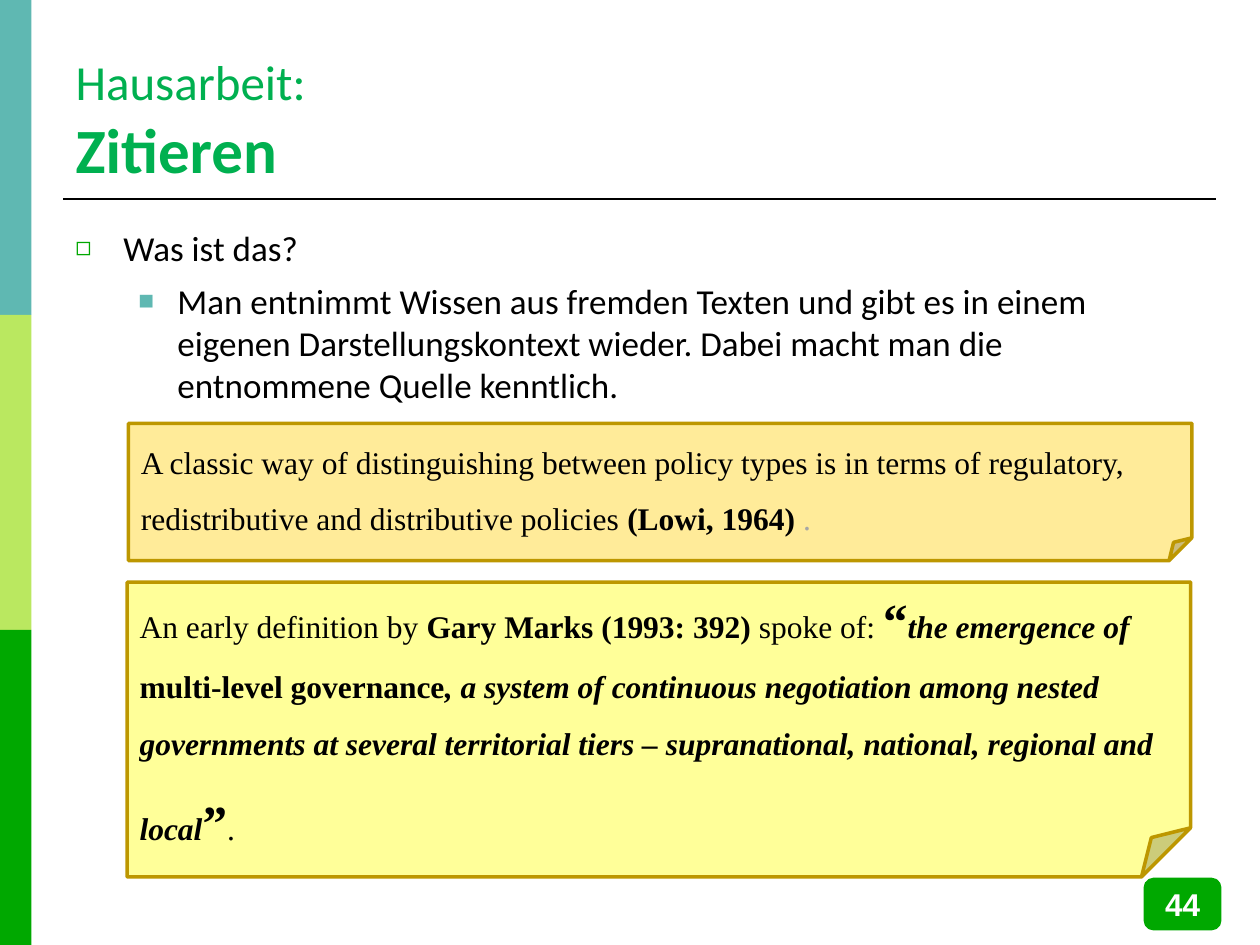
"""Build the slide about citing sources in a term paper."""
import pptx
import pptx.dml.color
import pptx.enum.shapes
import pptx.enum.text
import pptx.oxml.ns
import pptx.util
from lxml import etree

Inches = pptx.util.Inches
Pt = pptx.util.Pt
SHAPES = pptx.enum.shapes.MSO_SHAPE
ALIGN = pptx.enum.text.PP_ALIGN
ANCHOR = pptx.enum.text.MSO_ANCHOR
GREEN, TEAL, LIME = "00A800", "5FB8B2", "BAE860"
TITLE_GREEN, GOLD, BLACK = "00B050", "BD9700", "000000"
SERIF = "Times New Roman"


def color(value):
    """Turn a hex string into a colour."""
    return pptx.dml.color.RGBColor.from_string(value)


def add_child(parent, tag, **attributes):
    """Append a drawing element to a parent element."""
    return etree.SubElement(parent, pptx.oxml.ns.qn(tag), **attributes)


def add_span(para, text, size, font, ink=BLACK, bold=False, italic=False):
    """Add one formatted run to a paragraph."""
    span = para.add_run()
    span.text = text
    span.font.size = Pt(size)
    span.font.name = font
    span.font.color.rgb = color(ink)
    span.font.bold = bold
    span.font.italic = italic


def add_panel(page, kind, place, fill, line=None):
    """Add a filled preset shape with an optional outline."""
    panel = page.shapes.add_shape(kind, *map(Inches, place))
    panel.shadow.inherit = False
    panel.fill.solid()
    panel.fill.fore_color.rgb = color(fill)
    if line:
        panel.line.color.rgb = color(line)
        panel.line.width = Pt(2)
    else:
        panel.line.fill.background()
    return panel


def add_rule(page, left, right, top):
    """Add the horizontal line below the title."""
    rule = page.shapes.add_connector(
        pptx.enum.shapes.MSO_CONNECTOR.STRAIGHT,
        Inches(left), Inches(top), Inches(right), Inches(top))
    rule.line.color.rgb = color(BLACK)
    rule.line.width = Pt(1.5)
    add_child(rule._element.spPr, "a:effectLst")


def set_title(page, topic, heading):
    """Move the title and write its two lines."""
    title = page.shapes.title
    title.left, title.top = Inches(0.5), Inches(0.28)
    title.width, title.height = Inches(9.15), Inches(1.25)
    frame = title.text_frame
    frame.auto_size = pptx.enum.text.MSO_AUTO_SIZE.NONE
    frame.vertical_anchor = ANCHOR.BOTTOM
    para = frame.paragraphs[0]
    para.alignment = ALIGN.LEFT
    add_span(para, topic, 28, "Calibri", TITLE_GREEN)
    para.add_line_break()
    add_child(para._p[-1], "a:rPr", sz="2800")
    add_span(para, heading, 36, "Calibri", TITLE_GREEN, bold=True)


def add_bullet(para, text, level, symbol, ink, margin, hanging):
    """Write a bulleted paragraph with a hanging indent."""
    para.level = level
    properties = para._p.get_or_add_pPr()
    properties.set("marL", str(Inches(margin)))
    properties.set("indent", str(-Inches(hanging)))
    add_child(add_child(properties, "a:buClr"), "a:srgbClr", val=ink)
    add_child(properties, "a:buSzPct", val="75000")
    add_child(properties, "a:buFont", typeface="Arial")
    add_child(properties, "a:buChar", char=symbol)
    para.space_after = Pt(6)
    add_span(para, text, 20, "Calibri")


def add_body(page):
    """Add the question and its answer as bullets."""
    box = page.shapes.add_textbox(*map(Inches, (0.5, 1.75, 9.15, 5.46)))
    frame = box.text_frame
    frame.word_wrap = True
    add_bullet(frame.paragraphs[0], "Was ist das?", 0, "◻", GREEN, 0.38, 0.38)
    add_bullet(
        frame.add_paragraph(),
        "Man entnimmt Wissen aus fremden Texten und gibt es in einem eigenen "
        "Darstellungskontext wieder. Dabei macht man die entnommene Quelle "
        "kenntlich.", 1, "■", TEAL, 0.81, 0.31)


def add_note(page, place, fill, spans):
    """Add a folded note holding a quotation example."""
    note = add_panel(page, SHAPES.FOLDED_CORNER, place, fill, GOLD)
    frame = note.text_frame
    frame.word_wrap = True
    frame.vertical_anchor = ANCHOR.MIDDLE
    para = frame.paragraphs[0]
    para.alignment = ALIGN.LEFT
    para.line_spacing = 1.5
    for text, style in spans:
        add_span(para, text, **{"size": 18, "font": SERIF, **style})


def add_page_number(page, number):
    """Add the page number badge."""
    badge = add_panel(page, SHAPES.ROUNDED_RECTANGLE,
                      (9.09, 6.98, 0.59, 0.39), GREEN, GREEN)
    frame = badge.text_frame
    frame.word_wrap = False
    frame.vertical_anchor = ANCHOR.MIDDLE
    para = frame.paragraphs[0]
    para.alignment = ALIGN.CENTER
    add_span(para, number, 18, "Arial", "FFFFFF", bold=True)


def main():
    """Create the deck and save it."""
    deck = pptx.Presentation()
    deck.slide_width, deck.slide_height = Inches(10), Inches(7.5)
    page = deck.slides.add_slide(deck.slide_layouts[5])
    for index, fill in enumerate((TEAL, LIME, GREEN)):
        add_panel(page, SHAPES.RECTANGLE, (0, 2.5 * index, 0.25, 2.5), fill)
    add_rule(page, 0.5, 9.65, 1.58)
    set_title(page, "Hausarbeit:", "Zitieren")
    add_body(page)

    bold = {"bold": True}
    quote = {"bold": True, "italic": True}
    mark = {"bold": True, "size": 28}
    add_note(page, (1.02, 3.36, 8.44, 1.09), "FFEB99", [
        ("A classic way of distinguishing between policy types is in terms of "
         "regulatory, redistributive and distributive policies ", {}),
        ("(Lowi, 1964) ", bold),
        (".", {"ink": "A6A6A6"}),
    ])
    add_note(page, (1.01, 4.62, 8.44, 2.34), "FFFF99", [
        ("An early definition by ", {}),
        ("Gary Marks (1993: 392) ", bold),
        ("spoke of: ", {}),
        ("“", mark),
        ("the emergence of ", quote),
        ("multi-level governance", bold),
        (", a system of continuous negotiation among nested governments at "
         "several territorial tiers – supranational, national, regional and "
         "local", quote),
        ("”", mark),
        (".", {}),
    ])
    add_page_number(page, "44")
    deck.save("out.pptx")


if __name__ == "__main__":
    main()
